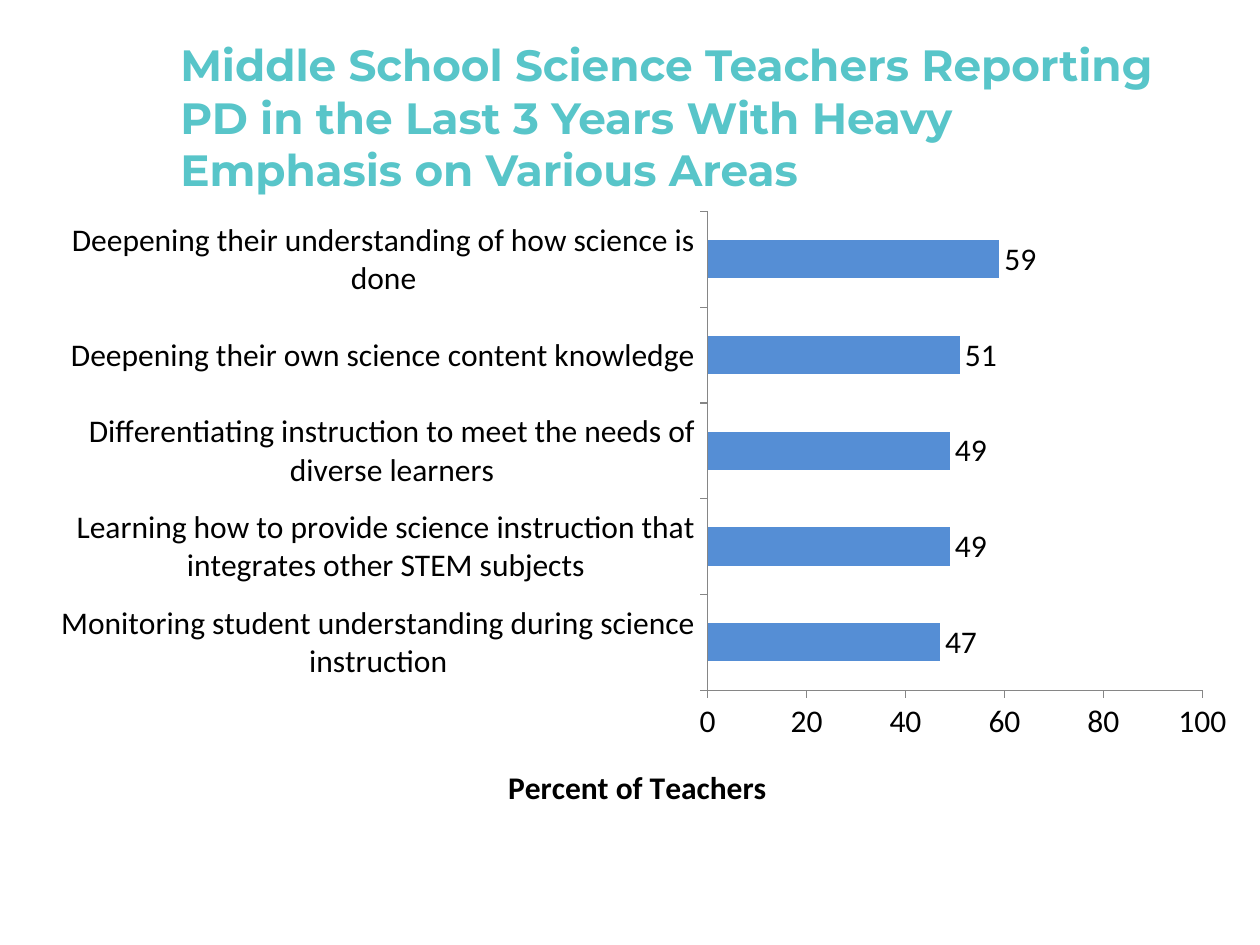
from lxml.etree import SubElement
from pptx import Presentation
from pptx.chart.data import CategoryChartData
from pptx.dml.color import RGBColor
from pptx.enum.chart import XL_CHART_TYPE, XL_LABEL_POSITION, XL_TICK_MARK
from pptx.enum.text import MSO_ANCHOR, MSO_AUTO_SIZE, PP_ALIGN
from pptx.oxml.ns import qn
from pptx.util import Cm, Pt

TEAL, BLUE, BLACK, GREY = "58C5C9", "558ED5", "000000", "868686"
TITLE = ("Middle School Science Teachers Reporting PD in the Last 3 Years "
         "With Heavy Emphasis on Various Areas")
AREAS = [
    ("Monitoring student understanding during science instruction", 47),
    ("Learning how to provide science instruction that integrates "
     "other STEM subjects", 49),
    ("Differentiating instruction to meet the needs of diverse learners", 49),
    ("Deepening their own science content knowledge", 51),
    ("Deepening their understanding of how science is done", 59),
]


def color(code):
    return RGBColor.from_string(code)


def style(font, name, size, code, bold=False):
    font.name, font.size, font.bold = name, Pt(size), bold
    font.color.rgb = color(code)


def place(part, **spots):
    """Fix the layout of a chart part, in fractions of the chart."""
    layout = part.find(qn("c:layout"))
    if layout is None:
        layout = SubElement(part, qn("c:layout"))
        before = part.find(qn("c:tx"))
        if before is None:
            part.insert(0, layout)
        else:
            before.addnext(layout)
    manual = SubElement(layout, qn("c:manualLayout"))
    if "w" in spots:
        SubElement(manual, qn("c:layoutTarget")).set("val", "inner")
    for key in ("x", "y"):
        SubElement(manual, qn(f"c:{key}Mode")).set("val", "edge")
    for key, val in spots.items():
        SubElement(manual, qn(f"c:{key}")).set("val", str(val))


def add_title(slide, left, top, width, height):
    title = slide.shapes.title
    title.left, title.top, title.width, title.height = left, top, width, height
    frame = title.text_frame
    frame.word_wrap = True
    frame.auto_size = MSO_AUTO_SIZE.NONE
    frame.vertical_anchor = MSO_ANCHOR.MIDDLE
    para = frame.paragraphs[0]
    para.alignment = PP_ALIGN.LEFT
    run = para.add_run()
    run.text = TITLE
    style(run.font, "Montserrat", 25, TEAL, True)


def add_bars(slide, left, top, width, height):
    data = CategoryChartData()
    data.categories = [area for area, _ in AREAS]
    data.add_series("Series 1", [val for _, val in AREAS])
    chart = slide.shapes.add_chart(XL_CHART_TYPE.BAR_CLUSTERED, left, top,
                                   width, height, data).chart
    chart.has_legend = chart.has_title = False
    style(chart.font, "Calibri", 18, BLACK)

    plot = chart.plots[0]
    plot.gap_width = 150
    plot.vary_by_categories = False
    fill = plot.series[0].format.fill
    fill.solid()
    fill.fore_color.rgb = color(BLUE)
    plot.has_data_labels = True
    labels = plot.data_labels
    labels.show_value = True
    labels.position = XL_LABEL_POSITION.OUTSIDE_END
    style(labels.font, "Calibri", 18, BLACK)

    for axis in (chart.category_axis, chart.value_axis):
        axis.has_major_gridlines = False
        axis.major_tick_mark = XL_TICK_MARK.OUTSIDE
        axis.format.line.color.rgb = color(GREY)
        style(axis.tick_labels.font, "Calibri", 18, BLACK)
    scale = chart.value_axis
    scale.minimum_scale, scale.maximum_scale, scale.major_unit = 0, 100, 20
    title = scale.axis_title
    run = title.text_frame.paragraphs[0].add_run()
    run.text = "Percent of Teachers"
    style(run.font, "Calibri", 18, BLACK, True)

    area = chart._chartSpace.chart.plotArea
    place(area, x=0.56, y=0.02, w=0.41, h=0.76)
    place(area.find(qn("c:valAx")).find(qn("c:title")), x=0.39, y=0.89)


def main():
    prs = Presentation()
    prs.slide_width, prs.slide_height = Cm(25.4), Cm(19.05)
    slide = prs.slides.add_slide(prs.slide_layouts[5])
    add_bars(slide, Cm(0.64), Cm(4.01), Cm(24.33), Cm(12.7))
    add_title(slide, Cm(3.38), Cm(0.76), Cm(20.75), Cm(3.18))
    prs.save("out.pptx")


if __name__ == "__main__":
    main()
